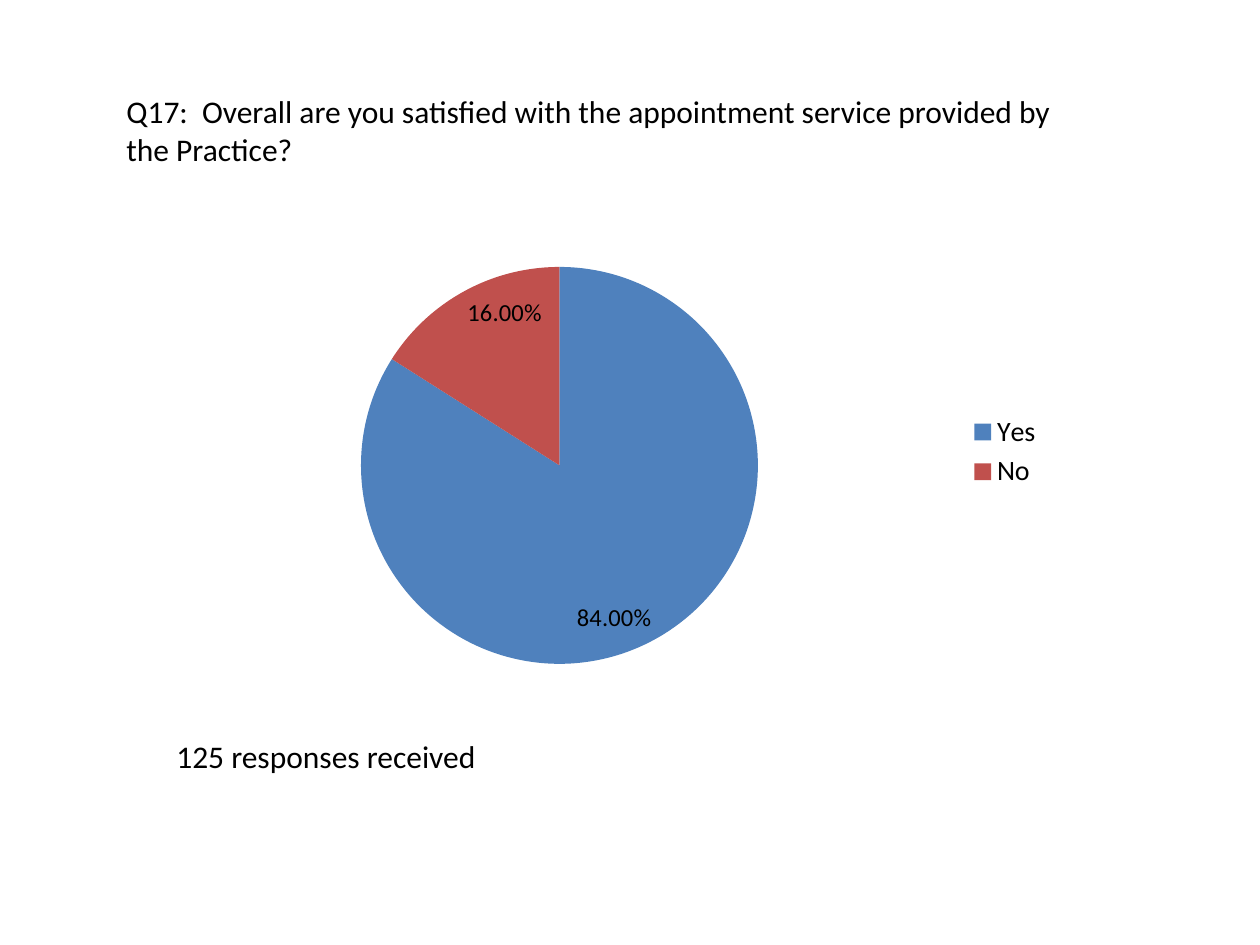
from dataclasses import dataclass

from lxml import etree
from pptx import Presentation
from pptx import util as u
from pptx.chart import data
from pptx.dml import color
from pptx.enum import chart as charts
from pptx.enum import text

PX = u.Inches(1) // 126


@dataclass(frozen=True)
class Theme:
    font: str = "Calibri"
    ink: str = "000000"
    yes: str = "4F81BD"
    no: str = "C0504D"
    body: int = 18
    legend: int = 16
    label: int = 14


theme = Theme()


def set_font(font, size):
    font.name = theme.font
    font.size = u.Pt(size)
    font.color.rgb = color.RGBColor.from_string(theme.ink)


def add_text(page, words, *, left, top, width, height, size=theme.body):
    box = page.shapes.add_textbox(left * PX, top * PX, width * PX, height * PX)
    frame = box.text_frame
    frame.word_wrap = True
    frame.auto_size = text.MSO_AUTO_SIZE.SHAPE_TO_FIT_TEXT
    span = frame.paragraphs[0].add_run()
    span.text = words
    set_font(span.font, size)


deck = Presentation()
deck.slide_width, deck.slide_height = 1260 * PX, 945 * PX
page = deck.slides.add_slide(deck.slide_layouts[6])

add_text(page, "Q17:  Overall are you satisfied with the appointment service provided by the Practice?",
         left=114, top=86, width=953, height=89)

# Pie chart of the answers
answers = data.CategoryChartData(number_format="0.00%")
answers.categories = ["Yes", "No"]
answers.add_series("Series 1", [0.84, 0.16])
left, top, width, height = 123, 224, 932, 456
pie = page.shapes.add_chart(charts.XL_CHART_TYPE.PIE, left * PX, top * PX,
                            width * PX, height * PX, answers).chart
pie.has_title = False
set_font(pie.font, 10)
pie.has_legend = True
pie.legend.position = charts.XL_LEGEND_POSITION.RIGHT
pie.legend.include_in_layout = False
set_font(pie.legend.font, theme.legend)

plot = pie.plots[0]
plot.vary_by_categories = True
for index, fill_color in enumerate([theme.yes, theme.no]):
    fill = plot.series[0].points[index].format.fill
    fill.solid()
    fill.fore_color.rgb = color.RGBColor.from_string(fill_color)

plot.has_data_labels = True
labels = plot.data_labels
labels.show_value = True
labels.show_percentage = False
labels.number_format = "0.00%"
labels.number_format_is_linked = False
labels.position = charts.XL_LABEL_POSITION.INSIDE_END
set_font(labels.font, theme.label)

# Fix the pie's place inside the chart frame
C = "{http://schemas.openxmlformats.org/drawingml/2006/chart}"
plot_area = pie.element.find(f".//{C}plotArea")
for old_layout in plot_area.findall(f"{C}layout"):
    plot_area.remove(old_layout)
layout = etree.Element(f"{C}layout")
plot_area.insert(0, layout)
manual = etree.SubElement(layout, f"{C}manualLayout")
diameter = 397
for tag, value in [("layoutTarget", "inner"), ("xMode", "edge"), ("yMode", "edge"),
                   ("x", (361 - left) / width), ("y", (267 - top) / height),
                   ("w", diameter / width), ("h", diameter / height)]:
    etree.SubElement(manual, f"{C}{tag}", val=str(value))

add_text(page, "125 responses received", left=164, top=731, width=932, height=50)

deck.save("out.pptx")
